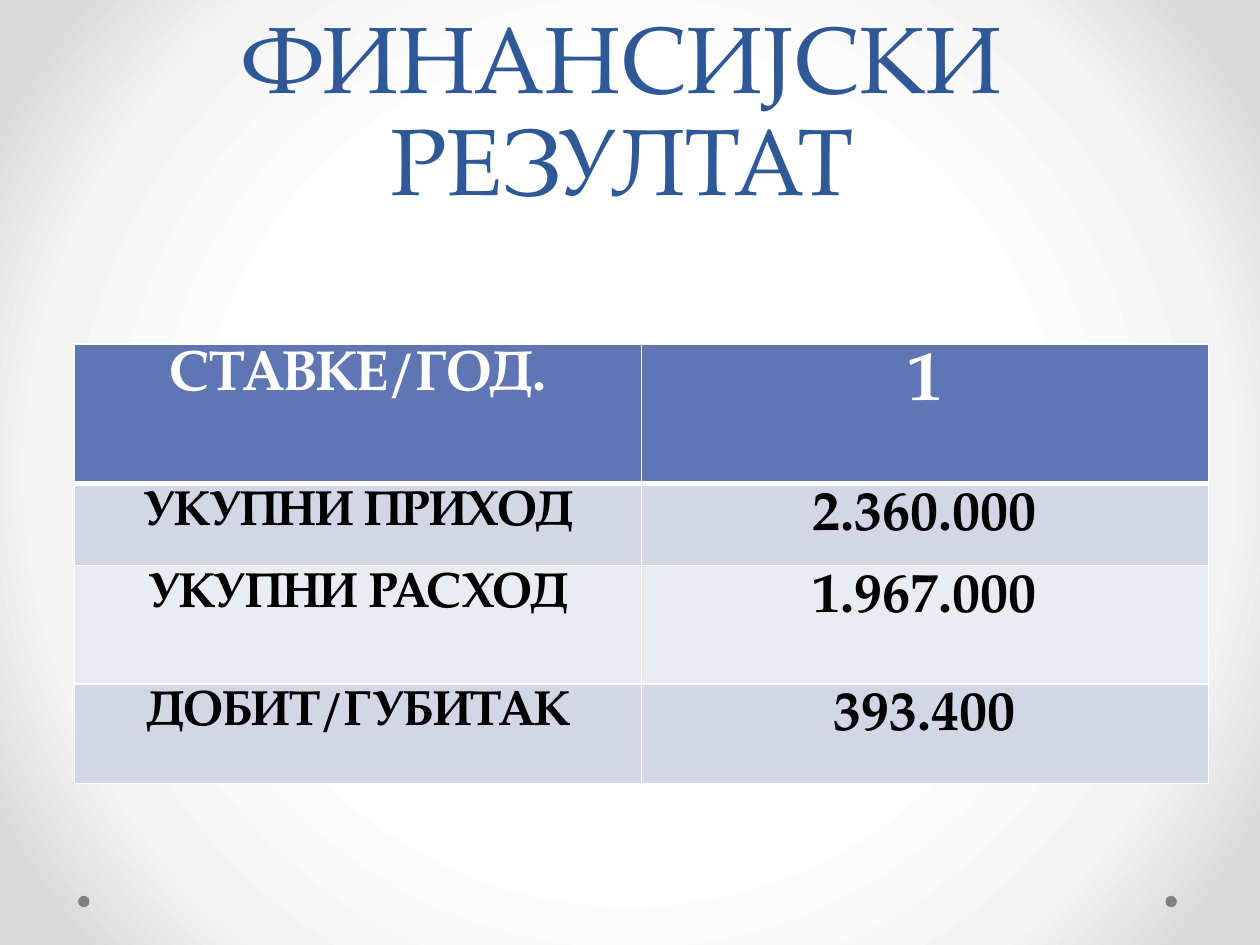
from lxml import etree
from pptx import Presentation
from pptx.dml.color import RGBColor
from pptx.enum.shapes import MSO_SHAPE
from pptx.enum.text import MSO_ANCHOR, PP_ALIGN
from pptx.oxml import parse_xml
from pptx.util import Inches, Pt

OVAL = MSO_SHAPE.OVAL
CENTER = PP_ALIGN.CENTER
BOTTOM = MSO_ANCHOR.BOTTOM
FONT = "TeX Gyre Pagella"
NAVY = RGBColor(0x2F, 0x58, 0x97)
BLUE = RGBColor(0x60, 0x76, 0xB4)
BAND_DARK = RGBColor(0xD2, 0xD6, 0xE5)
BAND_LIGHT = RGBColor(0xEA, 0xEC, 0xF2)
GRAY = RGBColor(0x80, 0x80, 0x80)
SILVER = RGBColor(0xDA, 0xDA, 0xDA)
PALE = RGBColor(0xF4, 0xF4, 0xF4)
WHITE = RGBColor(0xFF, 0xFF, 0xFF)
BLACK = RGBColor(0, 0, 0)
DRAWING = "http://schemas.openxmlformats.org/drawingml/2006/main"


def style_paragraph(para, size, color, bold=False):
    para.alignment = CENTER
    para.font.name = FONT
    para.font.size = Pt(size)
    para.font.color.rgb = color
    para.font.bold = bold


def set_borders(cell, bottom_width):
    # Border lines come before the fill in the cell properties
    widths = {"lnL": 1, "lnR": 1, "lnT": 1, "lnB": bottom_width}
    for index, (side, width) in enumerate(widths.items()):
        line = parse_xml(
            f'<a:{side} xmlns:a="{DRAWING}" w="{Pt(width)}"><a:solidFill>'
            f'<a:srgbClr val="{WHITE}"/></a:solidFill></a:{side}>')
        cell._tc.get_or_add_tcPr().insert(index, line)


deck = Presentation()
deck.slide_width, deck.slide_height = Inches(10), Inches(7.5)
page = deck.slides.add_slide(deck.slide_layouts[6])

# Radial background
page.background.fill.gradient()
gradient = page.background.fill._fill._gradFill
for child in list(gradient):
    gradient.remove(child)
stops = etree.SubElement(gradient, f"{{{DRAWING}}}gsLst")
for position, color in [(50, WHITE), (76, PALE), (92, SILVER)]:
    stop = etree.SubElement(stops, f"{{{DRAWING}}}gs", pos=str(position * 1000))
    etree.SubElement(stop, f"{{{DRAWING}}}srgbClr", val=str(color))
circle = etree.SubElement(gradient, f"{{{DRAWING}}}path", path="circle")
etree.SubElement(circle, f"{{{DRAWING}}}fillToRect",
                 {side: "50000" for side in "ltrb"})

# Footer dots
for left in (9.25, 0.62):
    dot = page.shapes.add_shape(OVAL, Inches(left), Inches(7.11),
                                Inches(0.09), Inches(0.09))
    dot.shadow.inherit = False
    dot.fill.solid()
    dot.fill.fore_color.rgb = GRAY
    dot.line.fill.background()

# Title, with side margins that wrap it onto two lines
title = page.shapes.add_textbox(Inches(-0.12), Inches(0),
                                Inches(10.12), Inches(1.75))
frame = title.text_frame
frame.word_wrap = True
frame.vertical_anchor = BOTTOM
frame.margin_left = frame.margin_right = Inches(0.5)
para = frame.paragraphs[0]
para.text = "ФИНАНСИЈСКИ РЕЗУЛТАТ"
para.line_spacing = Pt(58)
style_paragraph(para, 54, NAVY)

# Table of results: label, value, row height
results = [
    ("СТАВКЕ/ГОД.", "1", 1.11),
    ("УКУПНИ ПРИХОД", "2.360.000", 0.65),
    ("УКУПНИ РАСХОД", "1.967.000", 0.94),
    ("ДОБИТ/ГУБИТАК", "393.400", 0.79),
]
table = page.shapes.add_table(len(results), 2, Inches(0.59), Inches(2.73),
                              Inches(9), Inches(3.5)).table
for row, (label, value, height) in enumerate(results):
    header = row == 0
    table.rows[row].height = Inches(height)
    sizes = (32, 40) if header else (28, 32)
    band = BLUE if header else (BAND_DARK if row % 2 else BAND_LIGHT)
    for column, text in enumerate((label, value)):
        cell = table.cell(row, column)
        cell.text = text
        style_paragraph(cell.text_frame.paragraphs[0], sizes[column],
                        WHITE if header else BLACK, bold=True)
        cell.fill.solid()
        cell.fill.fore_color.rgb = band
        set_borders(cell, 3 if header else 1)

deck.save("out.pptx")
